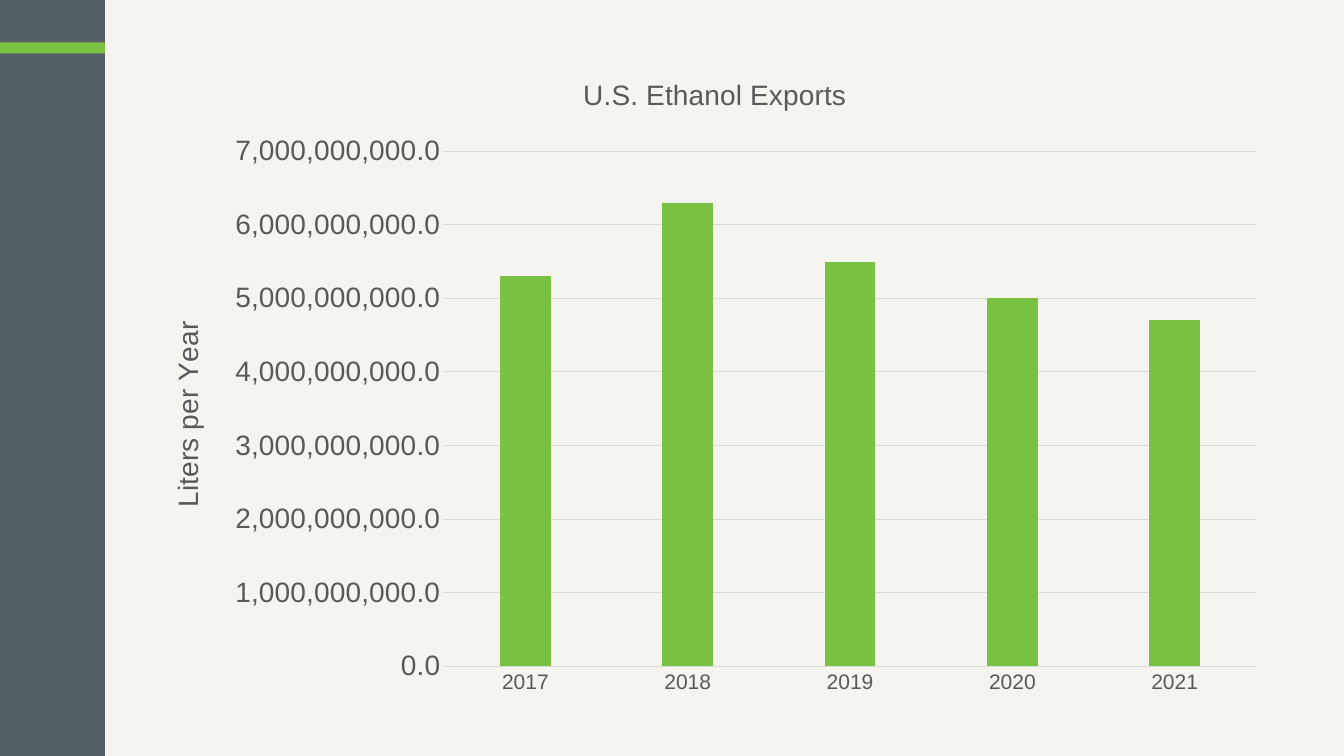
"""Build the ethanol exports slide with its side band and column chart."""
from typing import NamedTuple

from lxml.etree import SubElement
from pptx import Presentation
from pptx.chart.data import CategoryChartData
from pptx.dml.color import RGBColor
from pptx.enum.chart import XL_CHART_TYPE, XL_TICK_MARK
from pptx.enum.shapes import MSO_SHAPE
from pptx.oxml.ns import qn
from pptx.util import Inches, Pt

FONT = "Arial"
IVORY = RGBColor(0xF5, 0xF4, 0xEF)
SLATE = RGBColor(0x54, 0x5F, 0x66)
ACCENT_GREEN = RGBColor(0x7A, 0xC1, 0x42)
COLUMN_GREEN = RGBColor(0x79, 0xC1, 0x41)
TEXT_GREY = RGBColor(0x59, 0x59, 0x59)
GRID_GREY = RGBColor(0xD9, 0xD9, 0xD9)


class Band(NamedTuple):
    top: float
    height: float
    color: RGBColor


class Export(NamedTuple):
    year: str
    liters: int


BAND_WIDTH = 1.04
BANDS = (Band(0, 7.5, SLATE), Band(0.42, 0.11, ACCENT_GREEN))
EXPORTS = (
    Export("2017", 5_300_000_000),
    Export("2018", 6_300_000_000),
    Export("2019", 5_500_000_000),
    Export("2020", 5_000_000_000),
    Export("2021", 4_700_000_000),
)
PLOT_LAYOUT = {"x": 0.26, "y": 0.15, "w": 0.72, "h": 0.79}


def draw_band(slide, band: Band) -> None:
    stripe = slide.shapes.add_shape(
        MSO_SHAPE.RECTANGLE, 0, Inches(band.top), Inches(BAND_WIDTH), Inches(band.height)
    )
    stripe.shadow.inherit = False
    stripe.fill.solid()
    stripe.fill.fore_color.rgb = band.color
    stripe.line.fill.background()


def style_font(font, size: int) -> None:
    font.name = FONT
    font.size = Pt(size)
    font.bold = False
    font.color.rgb = TEXT_GREY


def write_title(text_frame, text: str) -> None:
    run = text_frame.paragraphs[0].add_run()
    run.text = text
    style_font(run.font, 20)


def style_rule(line) -> None:
    line.color.rgb = GRID_GREY
    line.width = Pt(0.75)


def style_axis(axis, size: int) -> None:
    axis.major_tick_mark = XL_TICK_MARK.NONE
    axis.minor_tick_mark = XL_TICK_MARK.NONE
    style_font(axis.tick_labels.font, size)


def place_plot(chart) -> None:
    plot_area = chart._chartSpace.chart.plotArea
    for previous in plot_area.findall(qn("c:layout")):
        plot_area.remove(previous)
    layout = SubElement(plot_area, qn("c:layout"))
    plot_area.insert(0, layout)
    manual = SubElement(layout, qn("c:manualLayout"))
    SubElement(manual, qn("c:layoutTarget")).set("val", "inner")
    for side in ("x", "y"):
        SubElement(manual, qn(f"c:{side}Mode")).set("val", "edge")
    for side, share in PLOT_LAYOUT.items():
        SubElement(manual, qn(f"c:{side}")).set("val", str(share))


def draw_exports_chart(slide) -> None:
    export_data = CategoryChartData(number_format="#,##0.0")
    export_data.categories = [export.year for export in EXPORTS]
    export_data.add_series("Series 1", [export.liters for export in EXPORTS])
    chart = slide.shapes.add_chart(
        XL_CHART_TYPE.COLUMN_CLUSTERED,
        Inches(1.5), Inches(0.53), Inches(11.18), Inches(6.47), export_data,
    ).chart
    chart.font.name = FONT
    chart.font.size = Pt(10)
    chart.has_legend = False
    chart.has_title = True
    chart.chart_title.include_in_layout = False
    write_title(chart.chart_title.text_frame, "U.S. Ethanol Exports")

    columns = chart.plots[0]
    columns.gap_width = 219
    columns.overlap = -27
    columns.vary_by_categories = False
    liters = columns.series[0]
    liters.format.fill.solid()
    liters.format.fill.fore_color.rgb = COLUMN_GREEN

    years = chart.category_axis
    style_axis(years, 15)
    style_rule(years.format.line)

    volume = chart.value_axis
    style_axis(volume, 20)
    volume.minimum_scale = 0
    volume.maximum_scale = 7_000_000_000
    volume.major_unit = 1_000_000_000
    volume.tick_labels.number_format = "#,##0.0"
    volume.tick_labels.number_format_is_linked = False
    volume.format.line.fill.background()
    style_rule(volume.major_gridlines.format.line)
    volume_caption = volume.axis_title.text_frame
    write_title(volume_caption, "Liters per Year")
    caption_body = volume_caption._element.find(qn("a:bodyPr"))
    caption_body.set("rot", "-5400000")
    caption_body.set("vert", "horz")
    place_plot(chart)


def main() -> None:
    deck = Presentation()
    deck.slide_width = Inches(13.33)
    deck.slide_height = Inches(7.5)
    slide = deck.slides.add_slide(deck.slide_layouts[6])
    slide.background.fill.solid()
    slide.background.fill.fore_color.rgb = IVORY
    for band in BANDS:
        draw_band(slide, band)
    draw_exports_chart(slide)
    deck.save("out.pptx")


if __name__ == "__main__":
    main()
